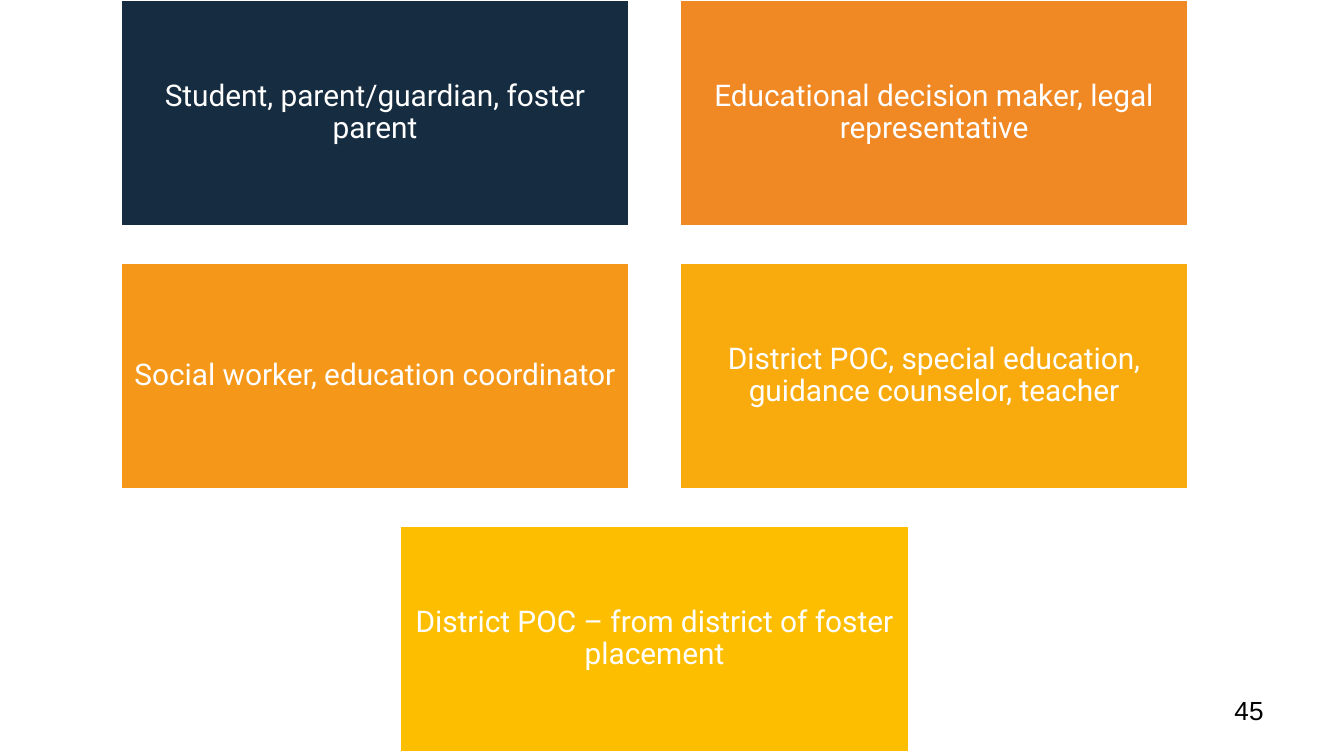
from pptx import Presentation
from pptx.dml.color import RGBColor
from pptx.enum.shapes import MSO_SHAPE
from pptx.enum.text import MSO_ANCHOR, PP_ALIGN
from pptx.util import Pt

# Grid of cards, in points
CARD_WIDTH, CARD_HEIGHT = 272.2, 121
COLUMN_STEP, ROW_STEP = 299.5, 140.8
GRID_LEFT = 64.8

# Column, row, fill and wording; the last card sits midway between the columns
CARDS = [
    (0, 0, "162C40", "Student, parent/guardian, foster parent"),
    (1, 0, "F08824", "Educational decision maker, legal representative"),
    (0, 1, "F59718", "Social worker, education coordinator"),
    (1, 1, "F9AA0C", "District POC, special education, guidance counselor, teacher"),
    (0.5, 2, "FEBE00", "District POC – from district of foster placement"),
]


def color(value):
    return RGBColor.from_string(value)


class SlideBuilder:
    card_font, number_font = "Roboto", "Arial"
    light, dark = "FFFFFF", "000000"

    def __init__(self, slide):
        self.slide = slide

    def add_text(self, frame, text, font, size, ink, align, insets):
        frame.word_wrap = True
        frame.margin_left = frame.margin_right = Pt(insets[0])
        frame.margin_top = frame.margin_bottom = Pt(insets[1])
        para = frame.paragraphs[0]
        para.alignment = align
        span = para.add_run()
        span.text = text
        span.font.name = font
        span.font.size = Pt(size)
        span.font.color.rgb = color(ink)
        return para

    def card(self, left, top, fill, text):
        box = self.slide.shapes.add_shape(
            MSO_SHAPE.RECTANGLE, Pt(left), Pt(top), Pt(CARD_WIDTH), Pt(CARD_HEIGHT))
        box.shadow.inherit = False
        box.fill.solid()
        box.fill.fore_color.rgb = color(fill)
        box.line.color.rgb = color(self.light)
        box.line.width = Pt(1)
        box.text_frame.vertical_anchor = MSO_ANCHOR.MIDDLE
        para = self.add_text(box.text_frame, text, self.card_font, 16, self.light,
                             PP_ALIGN.CENTER, (4.8, 4.8))
        para.line_spacing = 0.9

    def page_number(self, left, top, width, height, text):
        box = self.slide.shapes.add_textbox(Pt(left), Pt(top), Pt(width), Pt(height))
        self.add_text(box.text_frame, text, self.number_font, 14, self.dark,
                      PP_ALIGN.RIGHT, (7.2, 3.6))


def main():
    deck = Presentation()
    deck.slide_width, deck.slide_height = Pt(720), Pt(405)
    page = SlideBuilder(deck.slides.add_slide(deck.slide_layouts[6]))

    # Team members
    for column, row, fill, text in CARDS:
        page.card(GRID_LEFT + column * COLUMN_STEP, row * ROW_STEP, fill, text)

    # Page number
    page.page_number(516, 368.6, 168, 28, "45")

    deck.save("out.pptx")


if __name__ == "__main__":
    main()
